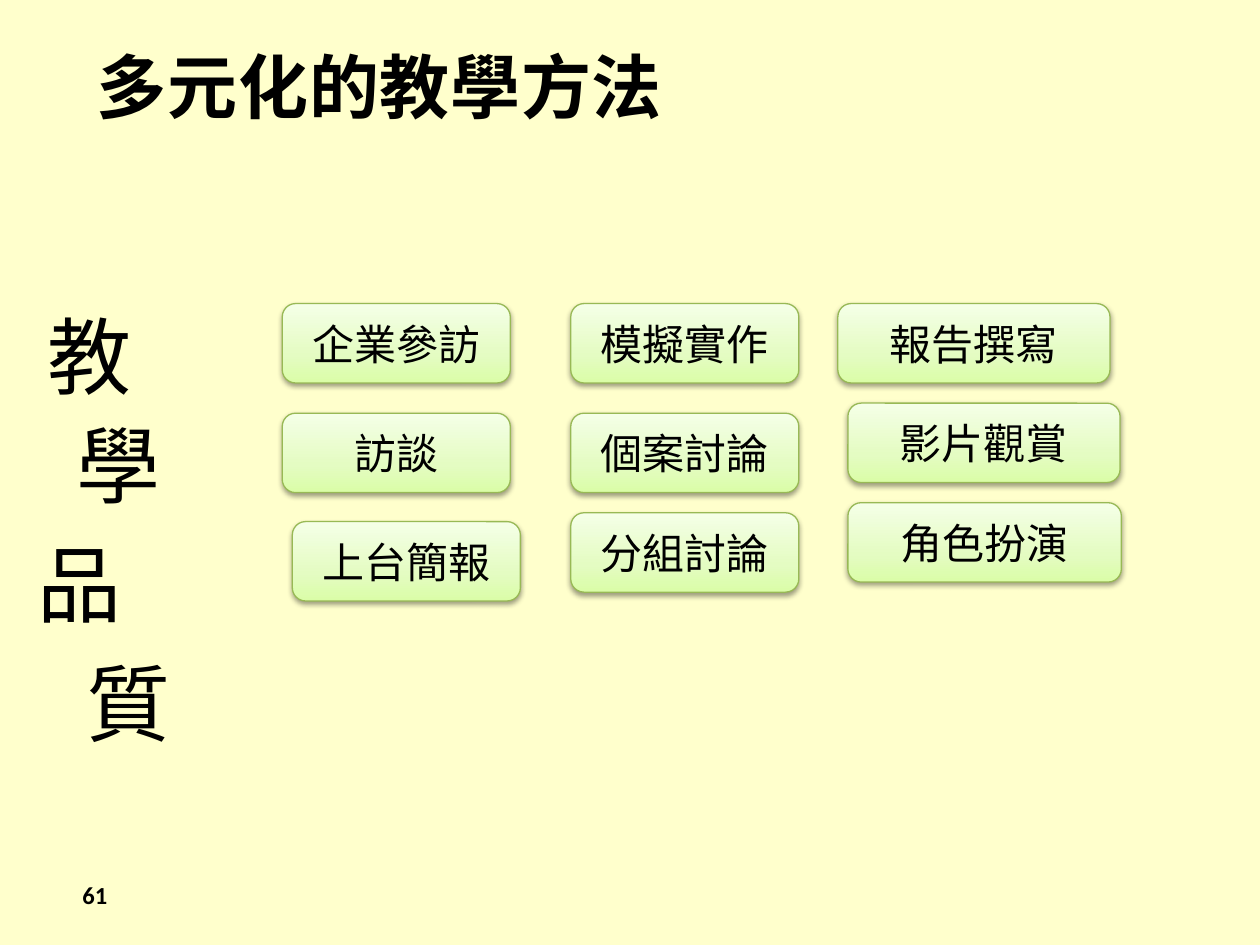
import pptx
import pptx.dml.color
import pptx.enum.shapes
import pptx.enum.text
import pptx.oxml
import pptx.oxml.ns
import pptx.util

Inches = pptx.util.Inches
ALIGN = pptx.enum.text.PP_ALIGN
ANCHOR = pptx.enum.text.MSO_ANCHOR
NS = pptx.oxml.ns.nsdecls("a")
qn = pptx.oxml.ns.qn


def color(value):
    return pptx.dml.color.RGBColor.from_string(value)


def write(box, text, font, size, align=ALIGN.LEFT, anchor=ANCHOR.MIDDLE, bold=False):
    frame = box.text_frame
    frame.word_wrap = True
    frame.vertical_anchor = anchor
    para = frame.paragraphs[0]
    para.alignment = align
    span = para.add_run()
    span.text = text
    span.font.size = pptx.util.Pt(size)
    span.font.bold = bold
    span.font.color.rgb = color("000000")
    span.font.name = font
    properties = span.font._element
    properties.append(pptx.oxml.parse_xml(f'<a:ea {NS} typeface="{font}"/>'))
    return properties


deck = pptx.Presentation()
deck.slide_width = Inches(10)
deck.slide_height = Inches(7.5)
page = deck.slides.add_slide(deck.slide_layouts[6])
page.background.fill.solid()
page.background.fill.fore_color.rgb = color("FFFFCC")

number = page.shapes.add_textbox(Inches(-1.38), Inches(6.9), Inches(2.33), Inches(0.4))
write(number, "61", "Calibri", 14, align=ALIGN.RIGHT, bold=True)

title = page.shapes.add_textbox(Inches(0.67), Inches(0.05), Inches(9), Inches(1.25))
write(title, "多元化的教學方法", "Noto Sans CJK SC", 40, bold=True).set("spc", "50")

methods = [
    ("企業參訪", 2.24, 2.41, 1.81),
    ("訪談", 2.24, 3.28, 1.81),
    ("模擬實作", 4.53, 2.41, 1.81),
    ("個案討論", 4.53, 3.28, 1.81),
    ("影片觀賞", 6.73, 3.2, 2.16),
    ("上台簡報", 2.32, 4.14, 1.81),
    ("分組討論", 4.53, 4.07, 1.81),
    ("角色扮演", 6.73, 3.99, 2.17),
    ("報告撰寫", 6.65, 2.41, 2.16),
]
gradient = [(0, "DAFDA7"), (35, "E4FCC2"), (100, "F5FFE7")]
for method, left, top, width in methods:
    card = page.shapes.add_shape(
        pptx.enum.shapes.MSO_SHAPE.ROUNDED_RECTANGLE,
        Inches(left), Inches(top), Inches(width), Inches(0.63),
    )
    card.fill.gradient()
    card.fill.gradient_angle = 90
    stops = card._element.spPr.find(".//" + qn("a:gsLst"))
    for stop in list(stops):
        stops.remove(stop)
    for position, shade in gradient:
        stops.append(pptx.oxml.parse_xml(
            f'<a:gs {NS} pos="{position * 1000}"><a:srgbClr val="{shade}"/></a:gs>'
        ))
    card.line.color.rgb = color("98B955")
    card.line.width = pptx.util.Pt(0.75)
    card.shadow.inherit = False
    card._element.spPr.find(qn("a:effectLst")).append(pptx.oxml.parse_xml(
        f'<a:outerShdw {NS} blurRad="40000" dist="20000" dir="5400000" rotWithShape="0">'
        '<a:srgbClr val="000000"><a:alpha val="38000"/></a:srgbClr></a:outerShdw>'
    ))
    write(card, method, "Noto Sans CJK SC", 24, align=ALIGN.CENTER)

quality = page.shapes.add_group_shape()
for character, left, top in [
    ("教", 0.28, 2.37), ("學", 0.51, 3.23), ("品", 0.2, 4.18), ("質", 0.59, 5.12),
]:
    box = quality.shapes.add_textbox(Inches(left), Inches(top), Inches(1.02), Inches(0.91))
    write(box, character, "Noto Sans CJK JP", 48, anchor=ANCHOR.TOP)
    box.text_frame.auto_size = pptx.enum.text.MSO_AUTO_SIZE.SHAPE_TO_FIT_TEXT

deck.save("out.pptx")
